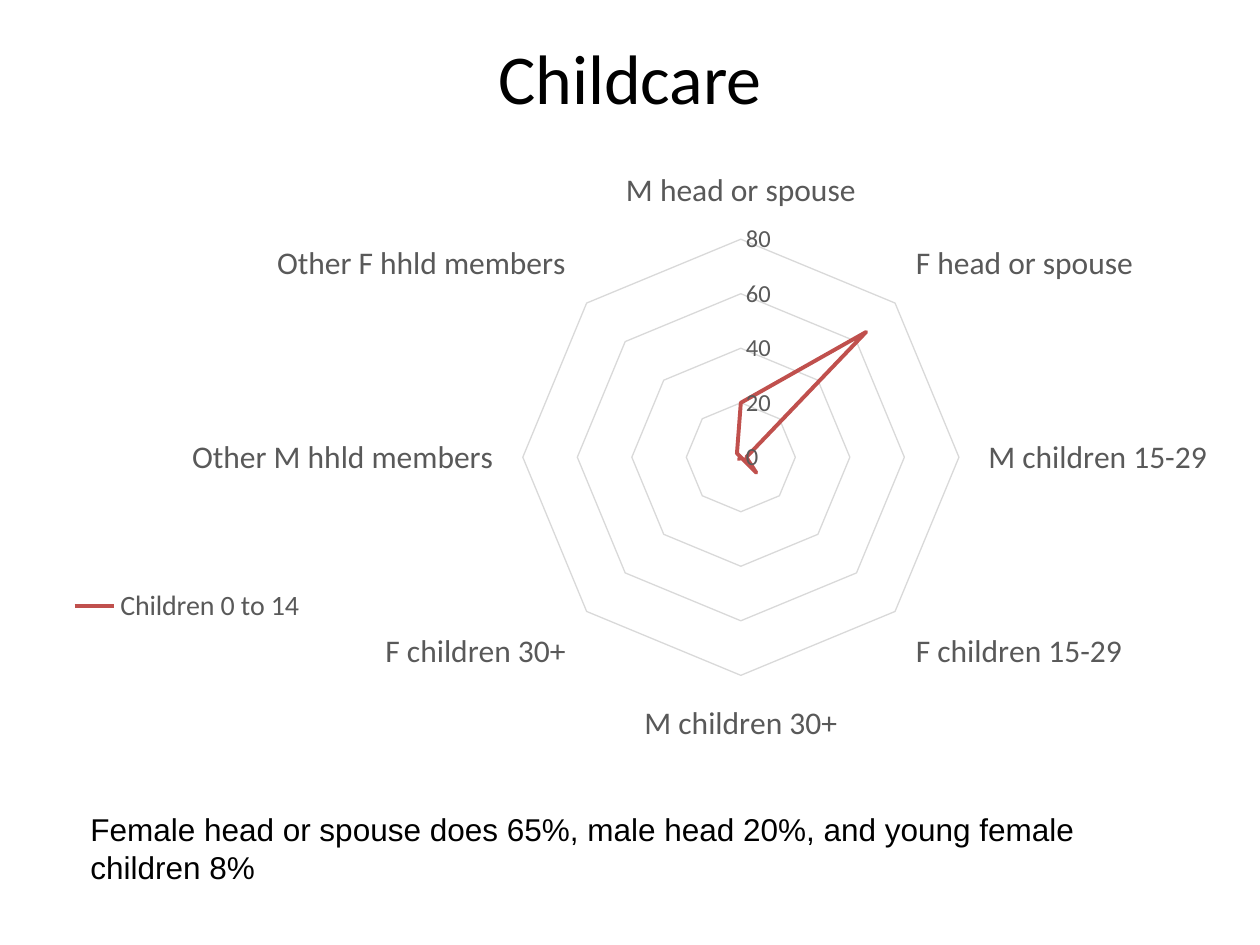
from lxml.etree import SubElement
from pptx import Presentation
from pptx.chart.data import CategoryChartData
from pptx.dml.color import RGBColor
from pptx.enum.chart import XL_CHART_TYPE, XL_LEGEND_POSITION, XL_MARKER_STYLE, XL_TICK_MARK
from pptx.enum.text import MSO_ANCHOR, PP_ALIGN
from pptx.oxml.ns import qn
from pptx.util import Emu, Pt

PX = 914400 // 126
COLORS = {"text": "000000", "label": "595959", "grid": "D9D9D9", "series": "C0504D"}
SHARES = {
    "M head or spouse": 20,
    "F head or spouse": 65,
    "M children 15-29": 2,
    "F children 15-29": 8,
    "M children 30+": 0,
    "F children 30+": 1,
    "Other M hhld members": 0,
    "Other F hhld members": 2,
}


def emu(box):
    return [Emu(length * PX) for length in box]


def color(name):
    return RGBColor.from_string(COLORS[name])


def style_font(font, size, name, tone):
    font.size, font.name = Pt(size), name
    font.color.rgb = color(tone)


def style_line(line, tone, width):
    line.color.rgb = color(tone)
    line.width = Pt(width)


def set_layout(layout, **values):
    """Fill a chart layout element with a manual layout."""
    for child in list(layout):
        layout.remove(child)
    manual = SubElement(layout, qn("c:manualLayout"))
    for tag, value in values.items():
        SubElement(manual, qn(f"c:{tag}")).set("val", str(value))


def layout_of(parent, position):
    layout = parent.find(qn("c:layout"))
    if layout is None:
        layout = SubElement(parent, qn("c:layout"))
        parent.insert(position, layout)
    return layout


def add_title(page, box, text):
    title = page.shapes.title
    title.left, title.top, title.width, title.height = emu(box)
    frame = title.text_frame
    frame.text = text
    frame.vertical_anchor = MSO_ANCHOR.MIDDLE
    para = frame.paragraphs[0]
    para.alignment = PP_ALIGN.CENTER
    style_font(para.runs[0].font, 40, "Calibri", "text")


def add_radar(page, box):
    data = CategoryChartData()
    data.categories = list(SHARES)
    data.add_series("Children 0 to 14", list(SHARES.values()))
    chart = page.shapes.add_chart(XL_CHART_TYPE.RADAR, *emu(box), data).chart
    chart.has_title = False
    style_font(chart.font, 10, "Calibri", "text")

    plot = chart.plots[0]
    plot.vary_by_categories = False
    series = plot.series[0]
    series.marker.style = XL_MARKER_STYLE.NONE
    style_line(series.format.line, "series", 2.25)

    for axis, size in ((chart.category_axis, 18), (chart.value_axis, 14)):
        axis.major_tick_mark = axis.minor_tick_mark = XL_TICK_MARK.NONE
        axis.has_major_gridlines = True
        style_line(axis.major_gridlines.format.line, "grid", 0.75)
        style_font(axis.tick_labels.font, size, "Calibri", "label")
        axis.tick_labels.number_format = "General"
        axis.tick_labels.number_format_is_linked = False
    style_line(chart.category_axis.format.line, "grid", 0.75)
    value_axis = chart.value_axis
    value_axis.format.line.fill.background()
    value_axis.minimum_scale, value_axis.maximum_scale = 0, 80
    value_axis.major_unit = 20

    chart.has_legend = True
    legend = chart.legend
    legend.position = XL_LEGEND_POSITION.LEFT
    legend.include_in_layout = False
    style_font(legend.font, 16, "Calibri", "label")

    area = chart.element.find(".//" + qn("c:plotArea"))
    set_layout(layout_of(area, 0), layoutTarget="inner", xMode="edge", yMode="edge",
               x=0.39, y=0.18, w=0.37, h=0.65)
    key = chart.element.find(".//" + qn("c:legend"))
    set_layout(layout_of(key, 1), xMode="edge", yMode="edge", x=0, y=0.69, w=0.21, h=0.07)


def add_finding(page, box, text):
    frame = page.shapes.add_textbox(*emu(box)).text_frame
    frame.word_wrap = True
    frame.text = text
    style_font(frame.paragraphs[0].runs[0].font, 18, "Arial", "text")


def main():
    deck = Presentation()
    deck.slide_width, deck.slide_height = emu((1260, 945))
    page = deck.slides.add_slide(deck.slide_layouts[5])
    add_title(page, (63, -3, 1134, 158), "Childcare")
    add_finding(page, (78, 804, 1024, 89),
                "Female head or spouse does 65%, male head 20%, and young female children 8%")
    add_radar(page, (63, 115, 1179, 678))
    deck.save("out.pptx")


if __name__ == "__main__":
    main()
